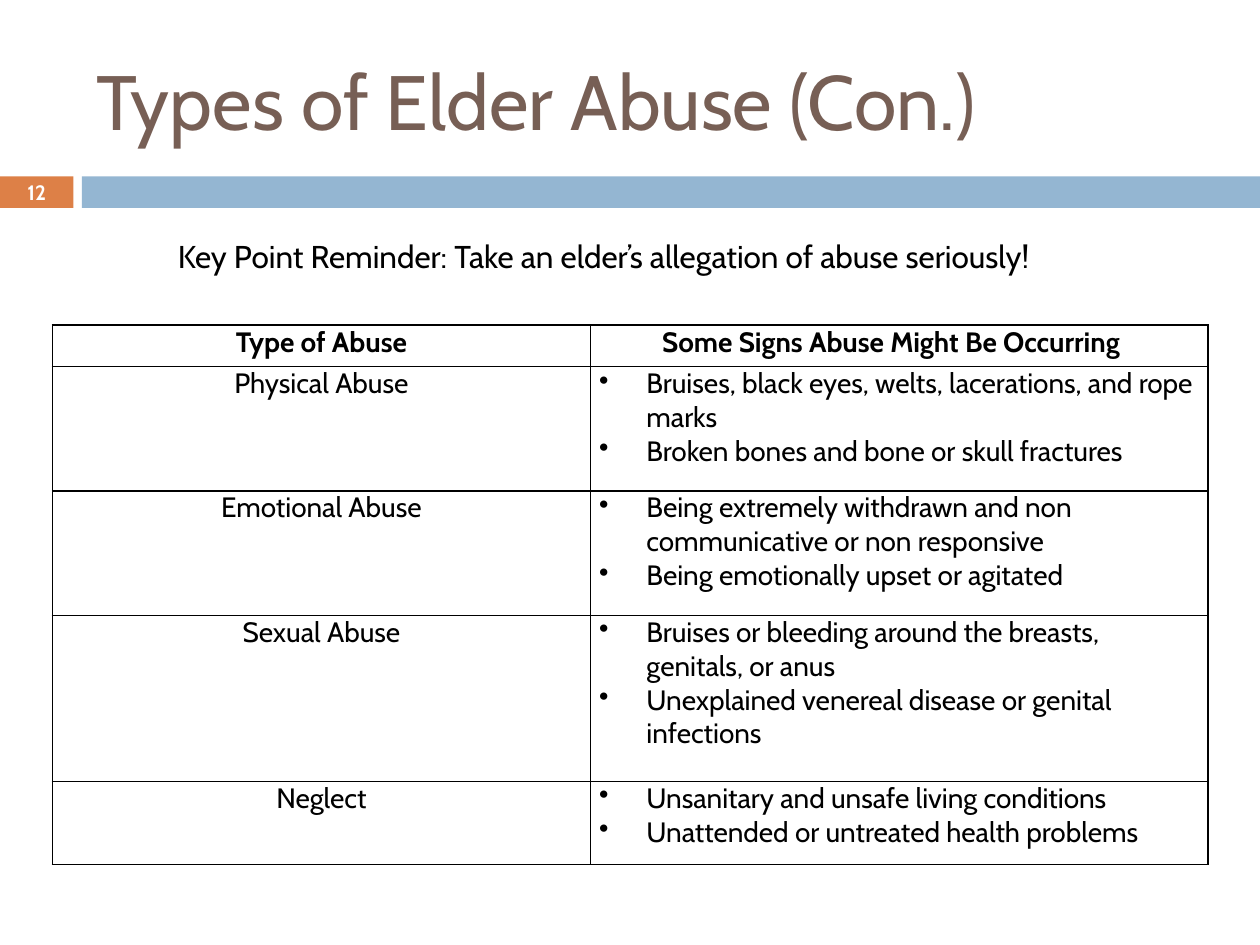
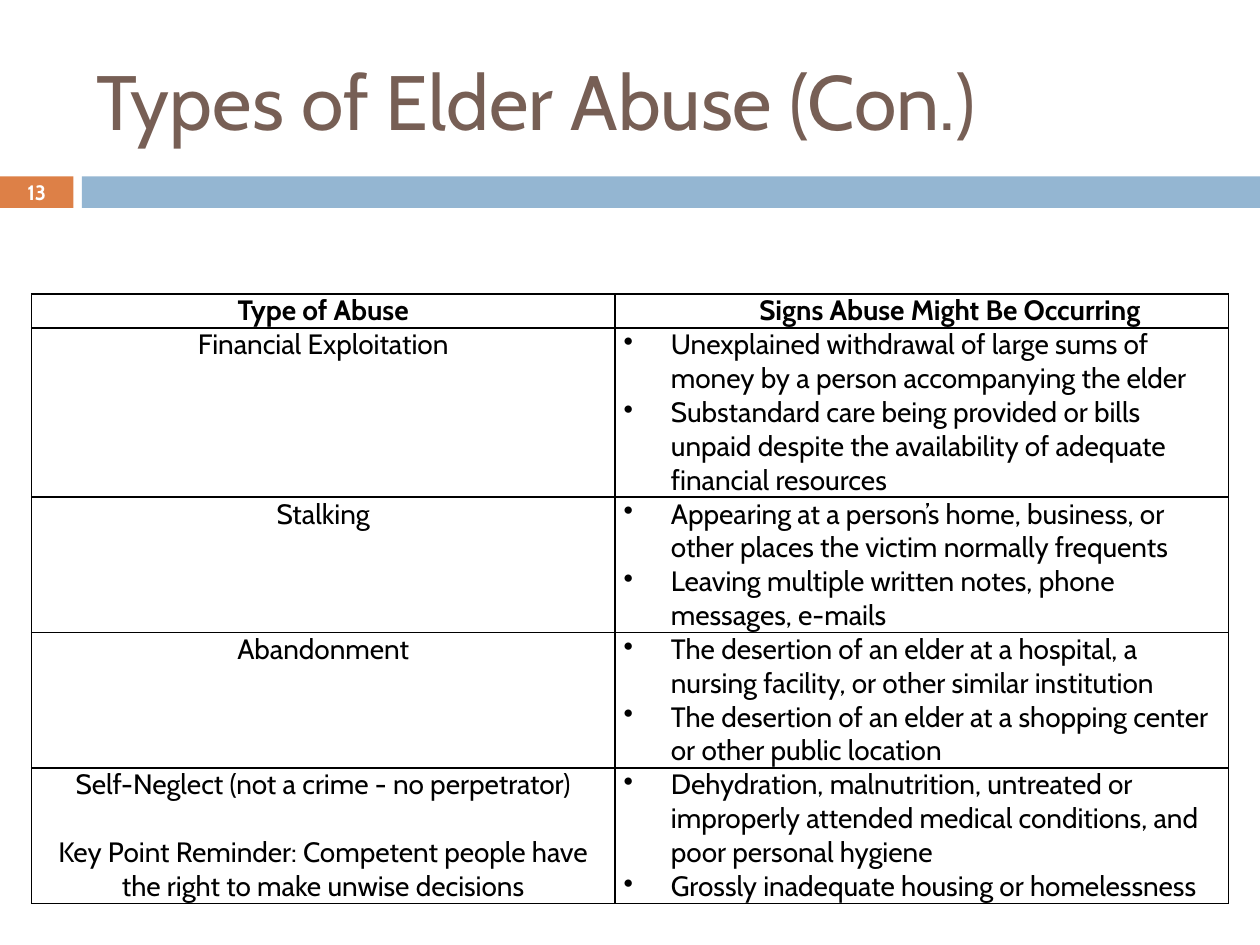
from pptx import Presentation
from pptx import util as u
from pptx.dml import color
from pptx.enum import shapes, text
from pptx.oxml import ns
from lxml import etree

Pt = u.Pt
CENTER, LEFT = text.PP_ALIGN.CENTER, text.PP_ALIGN.LEFT


def rgb(code):
    return color.RGBColor.from_string(code)


class Deck:
    # Shared style
    FONT = "Cabin"
    TITLE, NUMBER, BAND = "775F55", "DD8047", "94B6D2"
    BLACK, WHITE = "000000", "FFFFFF"
    BODY_SIZE, BULLET_INDENT = 16, 27

    def __init__(self):
        self.prs = Presentation()
        self.prs.slide_width, self.prs.slide_height = Pt(720), Pt(540)
        self.s = None

    def slide(self, title, number):
        """Start a slide with the band, title and slide number."""
        self.s = self.prs.slides.add_slide(self.prs.slide_layouts[6])
        self.rect(0, 100.8, 42, 18, self.NUMBER)
        self.rect(46.8, 100.8, 673.2, 18, self.BAND)
        self.textbox(48, 18, 642, 78, title, 44, self.TITLE,
                     anchor=text.MSO_ANCHOR.MIDDLE)
        self.textbox(0, 100, 42, 19.5, str(number), 11.9, self.WHITE, bold=True,
                     align=CENTER, anchor=text.MSO_ANCHOR.MIDDLE)

    def rect(self, x, y, w, h, fill):
        sp = self.s.shapes.add_shape(shapes.MSO_SHAPE.RECTANGLE,
                                     Pt(x), Pt(y), Pt(w), Pt(h))
        sp.shadow.inherit = False
        sp.fill.solid()
        sp.fill.fore_color.rgb = rgb(fill)
        sp.line.fill.background()

    def run(self, p, words, size, code, bold=False):
        r = p.add_run()
        r.text = words
        r.font.name, r.font.size, r.font.bold = self.FONT, Pt(size), bold
        r.font.color.rgb = rgb(code)

    def textbox(self, x, y, w, h, words, size, code, bold=False,
                align=LEFT, anchor=text.MSO_ANCHOR.TOP):
        tf = self.s.shapes.add_textbox(Pt(x), Pt(y), Pt(w), Pt(h)).text_frame
        tf.word_wrap, tf.vertical_anchor = True, anchor
        p = tf.paragraphs[0]
        p.alignment = align
        self.run(p, words, size, code, bold)

    def paragraphs(self, cell, lines, align=LEFT, bold=False, bullet=False,
                   indent=0, gap=0):
        """Fill a cell; gap is the space before each later paragraph."""
        tf = cell.text_frame
        for i, line in enumerate(lines):
            p = tf.add_paragraph() if i else tf.paragraphs[0]
            p.alignment = align
            if i and gap:
                p.space_before = Pt(gap)
            pPr = p._p.get_or_add_pPr()
            if bullet:
                pPr.set("marL", str(Pt(self.BULLET_INDENT)))
                pPr.set("indent", str(-Pt(self.BULLET_INDENT)))
                etree.SubElement(pPr, ns.qn("a:buChar"), char="•")
            elif indent:
                pPr.set("marL", str(Pt(indent)))
            self.run(p, line, self.BODY_SIZE, self.BLACK, bold)

    def frame(self, cell):
        """Give a cell its margins, black borders and no fill."""
        cell.margin_left = cell.margin_right = Pt(5)
        cell.margin_top = cell.margin_bottom = 0
        tcPr = cell._tc.get_or_add_tcPr()
        for side in ("lnL", "lnR", "lnT", "lnB"):
            ln = etree.SubElement(tcPr, ns.qn("a:" + side), w=str(Pt(1)))
            fill = etree.SubElement(ln, ns.qn("a:solidFill"))
            etree.SubElement(fill, ns.qn("a:srgbClr"), val=self.BLACK)
        cell.fill.background()

    def table(self, x, y, widths, pitch, header, header_align, rows):
        """Each row is (height in lines, types, signs); pitch is a line's height."""
        heights = [pitch] + [pitch * count for count, _, _ in rows]
        tbl = self.s.shapes.add_table(len(heights), 2, Pt(x), Pt(y),
                                      Pt(sum(widths)), Pt(sum(heights))).table
        tbl.first_row = tbl.horz_banding = False
        for col, width in zip(tbl.columns, widths):
            col.width = Pt(width)
        for row, height in zip(tbl.rows, heights):
            row.height = Pt(height)
        for cell in tbl.iter_cells():
            self.frame(cell)
        self.paragraphs(tbl.cell(0, 0), ["Type of Abuse"], CENTER, bold=True)
        self.paragraphs(tbl.cell(0, 1), [header], header_align, bold=True, indent=36)
        for i, (_, types, signs) in enumerate(rows, 1):
            self.paragraphs(tbl.cell(i, 0), types, CENTER, gap=pitch)
            self.paragraphs(tbl.cell(i, 1), signs, bullet=True)


TITLE = "Types of Elder Abuse (Con.)"

# Row data: height in lines, type of abuse, signs
COMMON_TYPES = [
    (3, ["Physical Abuse"],
     ["Bruises, black eyes, welts, lacerations, and rope marks",
      "Broken bones and bone or skull fractures"]),
    (3, ["Emotional Abuse"],
     ["Being extremely withdrawn and non communicative or non responsive",
      "Being emotionally upset or agitated"]),
    (4, ["Sexual Abuse"],
     ["Bruises or bleeding around the breasts, genitals, or anus",
      "Unexplained venereal disease or genital infections"]),
    (2, ["Neglect"],
     ["Unsanitary and unsafe living conditions",
      "Unattended or untreated health problems"]),
]
OTHER_TYPES = [
    (5, ["Financial Exploitation"],
     ["Unexplained withdrawal of large sums of money by a person "
      "accompanying the elder",
      "Substandard care being provided or bills unpaid despite the "
      "availability of adequate financial resources"]),
    (4, ["Stalking"],
     ["Appearing at a person’s home, business, or other places the victim "
      "normally frequents",
      "Leaving multiple written notes, phone messages, e-mails"]),
    (4, ["Abandonment"],
     ["The desertion of an elder at a hospital, a nursing facility, or other "
      "similar institution",
      "The desertion of an elder at a shopping center or other public location"]),
    (4, ["Self-Neglect (not a crime - no perpetrator)",
         "Key Point Reminder: Competent people have the right to make "
         "unwise decisions"],
     ["Dehydration, malnutrition, untreated or improperly attended medical "
      "conditions, and poor personal hygiene",
      "Grossly inadequate housing or homelessness"]),
]


def main():
    deck = Deck()

    # Slide 12: common types and key point
    deck.slide(TITLE, 12)
    deck.table(30, 185.8, [307.4, 352.8], 23.7,
               "Some Signs Abuse Might Be Occurring", LEFT, COMMON_TYPES)
    deck.textbox(42, 132, 606, 29,
                 "Key Point Reminder: Take an elder’s allegation of abuse seriously!",
                 18, deck.BLACK, align=CENTER)

    # Slide 13: other types
    deck.slide(TITLE, 13)
    deck.table(18, 168, [333.4, 350.6], 19.35,
               "Signs Abuse Might Be Occurring ", CENTER, OTHER_TYPES)

    deck.prs.save("out.pptx")


if __name__ == "__main__":
    main()
